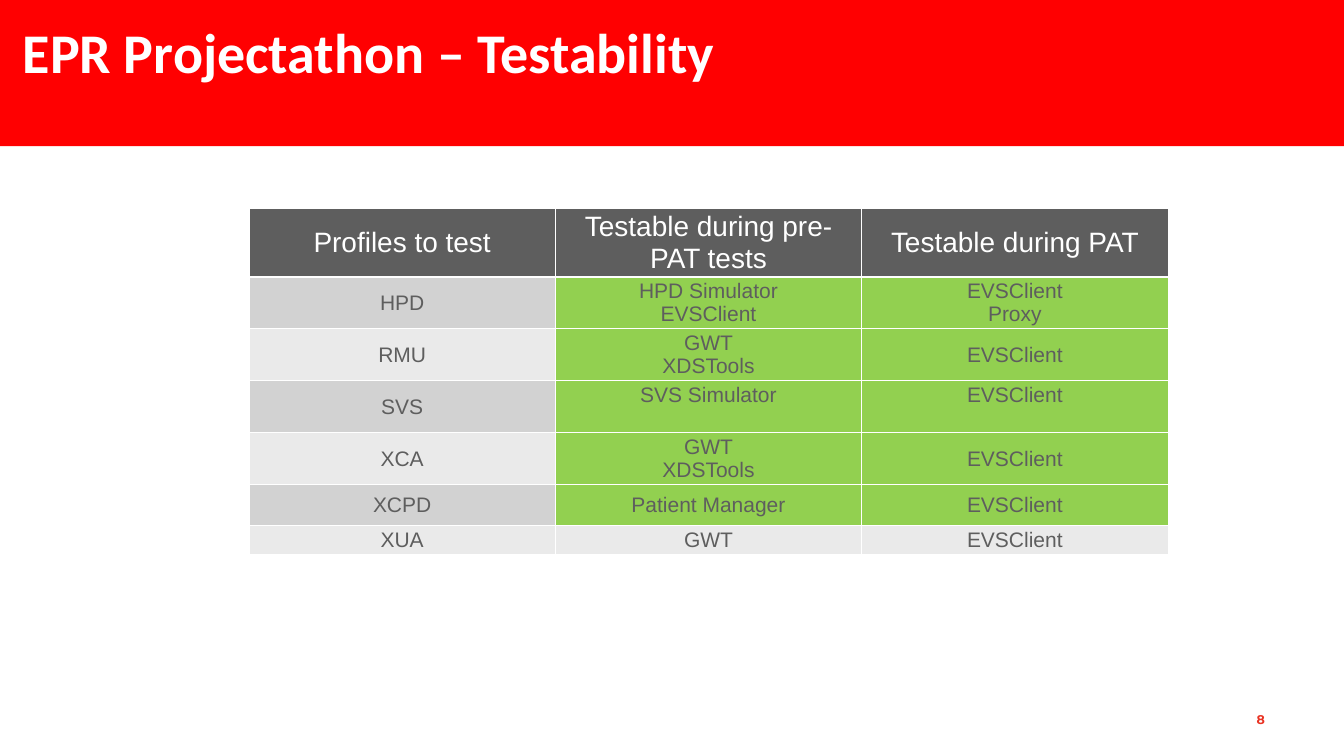
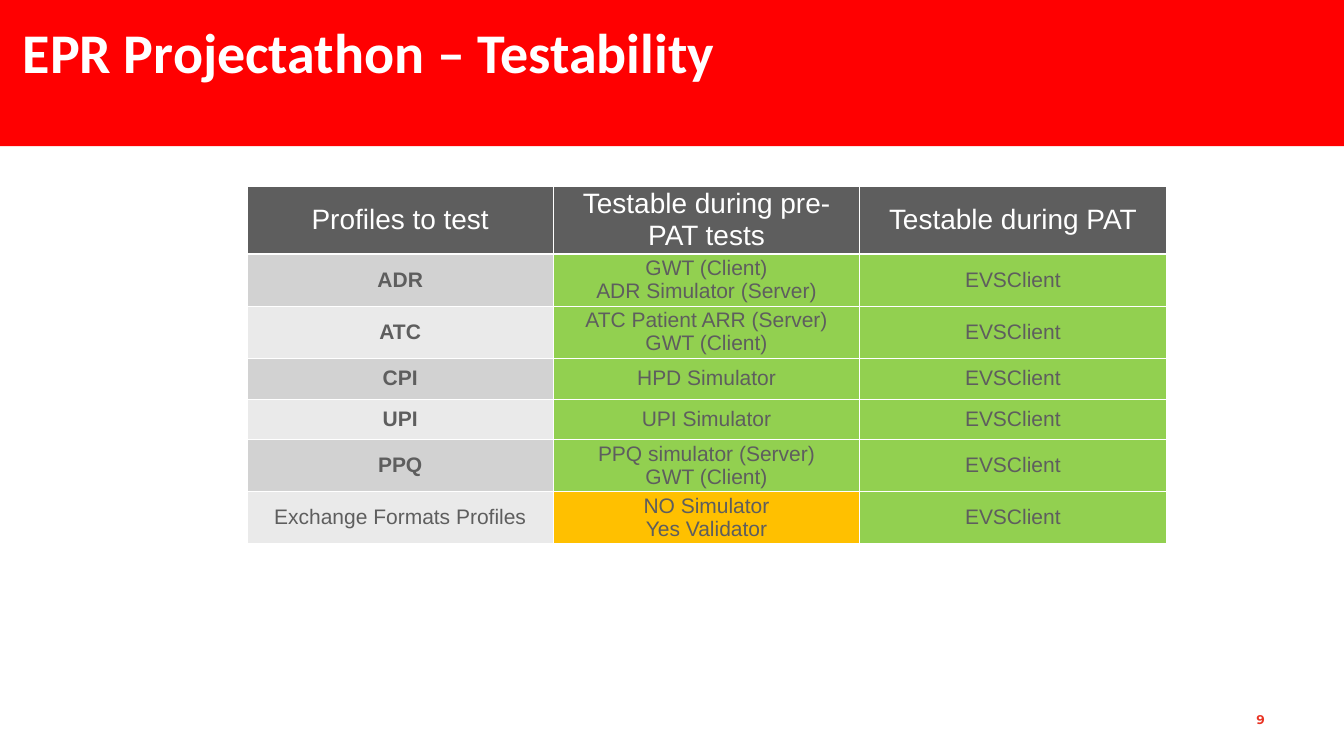
"""Build the two EPR Projectathon testability slides."""
from dataclasses import dataclass

from lxml import etree
from pptx import Presentation
from pptx.dml.color import RGBColor
from pptx.enum import shapes, text
from pptx.oxml.ns import qn
from pptx.util import Cm, Pt


@dataclass(frozen=True)
class Theme:
    """Colours, fonts and type sizes shared by the slides."""
    band: str = "FF0001"
    white: str = "FFFFFF"
    dark: str = "5E5E5E"
    stripes: tuple = ("D2D2D2", "EAEAEA")
    green: str = "92D050"
    amber: str = "FFC000"
    number: str = "E93424"
    title_size: int = 80
    header_size: int = 40
    cell_size: int = 30
    number_size: int = 18


def style_text(frame, align, name, size, color, bold=False, spacing=1.0):
    """Format every paragraph of a text frame."""
    for para in frame.paragraphs:
        para.alignment = align
        para.line_spacing = spacing
        for key, value in {"name": name, "size": Pt(size), "bold": bold}.items():
            setattr(para.font, key, value)
        para.font.color.rgb = RGBColor.from_string(color)


def add_borders(cell, color, bottom):
    """Draw the four cell borders, placing them ahead of the fill."""
    properties = cell._tc.get_or_add_tcPr()
    widths = {"a:lnL": 1, "a:lnR": 1, "a:lnT": 1, "a:lnB": bottom}
    for index, (tag, width) in enumerate(widths.items()):
        line = etree.Element(qn(tag), w=str(Pt(width)))
        fill = etree.SubElement(line, qn("a:solidFill"))
        etree.SubElement(fill, qn("a:srgbClr"), val=color)
        properties.insert(index, line)


theme = Theme()
CENTER, LEFT = text.PP_ALIGN.CENTER, text.PP_ALIGN.LEFT
TOP, MIDDLE, BOTTOM = (text.MSO_ANCHOR.TOP, text.MSO_ANCHOR.MIDDLE,
                       text.MSO_ANCHOR.BOTTOM)
TITLE = "EPR Projectathon – Testability"
HEADER = ("Profiles to test", "Testable during pre-PAT tests", "Testable during PAT")
HEADER_HEIGHT, TALL, SINGLE, COMPACT = 3.43, 2.62, 2.06, 1.45
COLUMN_WIDTH = 15.44
INSETS = dict.fromkeys(
    ("margin_left", "margin_right", "margin_top", "margin_bottom"), Cm(0.15))

pages = [
    {"number": "8", "left": 12.55, "top": 10.52, "bold": (), "top_aligned": ("SVS",),
     "fills": {("XUA", 1): theme.stripes[1], ("XUA", 2): theme.stripes[1]},
     "rows": [
         ("HPD", "HPD Simulator\nEVSClient", "EVSClient\nProxy", TALL),
         ("RMU", "GWT\nXDSTools", "EVSClient", TALL),
         ("SVS", "SVS Simulator", "EVSClient", TALL),
         ("XCA", "GWT\nXDSTools", "EVSClient", TALL),
         ("XCPD", "Patient Manager", "EVSClient", SINGLE),
         ("XUA", "GWT", "EVSClient", COMPACT),
     ]},
    {"number": "9", "left": 12.45, "top": 9.37, "top_aligned": (),
     "bold": ("ADR", "ATC", "CPI", "UPI", "PPQ"),
     "fills": {("Exchange Formats Profiles", 1): theme.amber},
     "rows": [
         ("ADR", "GWT (Client)\nADR Simulator (Server)", "EVSClient", TALL),
         ("ATC", "ATC Patient ARR (Server)\nGWT (Client)", "EVSClient", TALL),
         ("CPI", "HPD Simulator", "EVSClient", SINGLE),
         ("UPI", "UPI Simulator", "EVSClient", SINGLE),
         ("PPQ", "PPQ simulator (Server)\nGWT (Client)", "EVSClient", TALL),
         ("Exchange Formats Profiles", "NO Simulator\nYes Validator", "EVSClient", TALL),
     ]},
]

deck = Presentation()
deck.slide_width, deck.slide_height = Cm(67.74), Cm(38.1)

for page in pages:
    slide = deck.slides.add_slide(deck.slide_layouts[5])

    band = slide.shapes.add_shape(
        shapes.MSO_SHAPE.RECTANGLE, Cm(-0.03), Cm(-0.03), Cm(67.8), Cm(7.4))
    band.shadow.inherit = False
    band.fill.solid()
    band.fill.fore_color.rgb = RGBColor.from_string(theme.band)
    band.line.fill.background()
    slide.shapes._spTree.insert(2, band._element)

    title = slide.shapes.title
    title.left, title.top, title.width, title.height = Cm(1), Cm(1.37), Cm(49.15), Cm(5.44)
    title.text_frame.text = TITLE
    number = slide.shapes.add_textbox(Cm(63.02), Cm(35.86), Cm(1.04), Cm(0.94))
    number.text_frame.text = page["number"]
    for box, anchor in ((title, TOP), (number, BOTTOM)):
        settings = {**INSETS, "word_wrap": True, "vertical_anchor": anchor,
                    "auto_size": text.MSO_AUTO_SIZE.NONE}
        for key, value in settings.items():
            setattr(box.text_frame, key, value)
    style_text(title.text_frame, LEFT, "Calibri", theme.title_size, theme.white, True, 0.8)
    style_text(number.text_frame, CENTER, "Montserrat", theme.number_size, theme.number, True)

    rows = [(*HEADER, HEADER_HEIGHT), *page["rows"]]
    table = slide.shapes.add_table(
        len(rows), len(HEADER), Cm(page["left"]), Cm(page["top"]),
        Cm(COLUMN_WIDTH * len(HEADER)), Cm(sum(row[-1] for row in rows))).table
    table.first_row = table.horz_banding = False
    for column in table.columns:
        column.width = Cm(COLUMN_WIDTH)
    for row_index, (*labels, height) in enumerate(rows):
        table.rows[row_index].height = Cm(height)
        profile, is_header = labels[0], row_index == 0
        for column_index, label in enumerate(labels):
            cell = table.cell(row_index, column_index)
            cell.text = label
            at_top = column_index > 0 and profile in page["top_aligned"]
            cell.vertical_anchor = TOP if at_top else MIDDLE
            if is_header:
                fill, size, color = theme.dark, theme.header_size, theme.white
            else:
                usual = theme.green if column_index else theme.stripes[(row_index - 1) % 2]
                fill = page["fills"].get((profile, column_index), usual)
                size, color = theme.cell_size, theme.dark
            cell.fill.solid()
            cell.fill.fore_color.rgb = RGBColor.from_string(fill)
            style_text(cell.text_frame, CENTER, "Arial", size, color,
                       column_index == 0 and profile in page["bold"])
            add_borders(cell, theme.white, 3 if is_header else 1)

deck.save("out.pptx")
